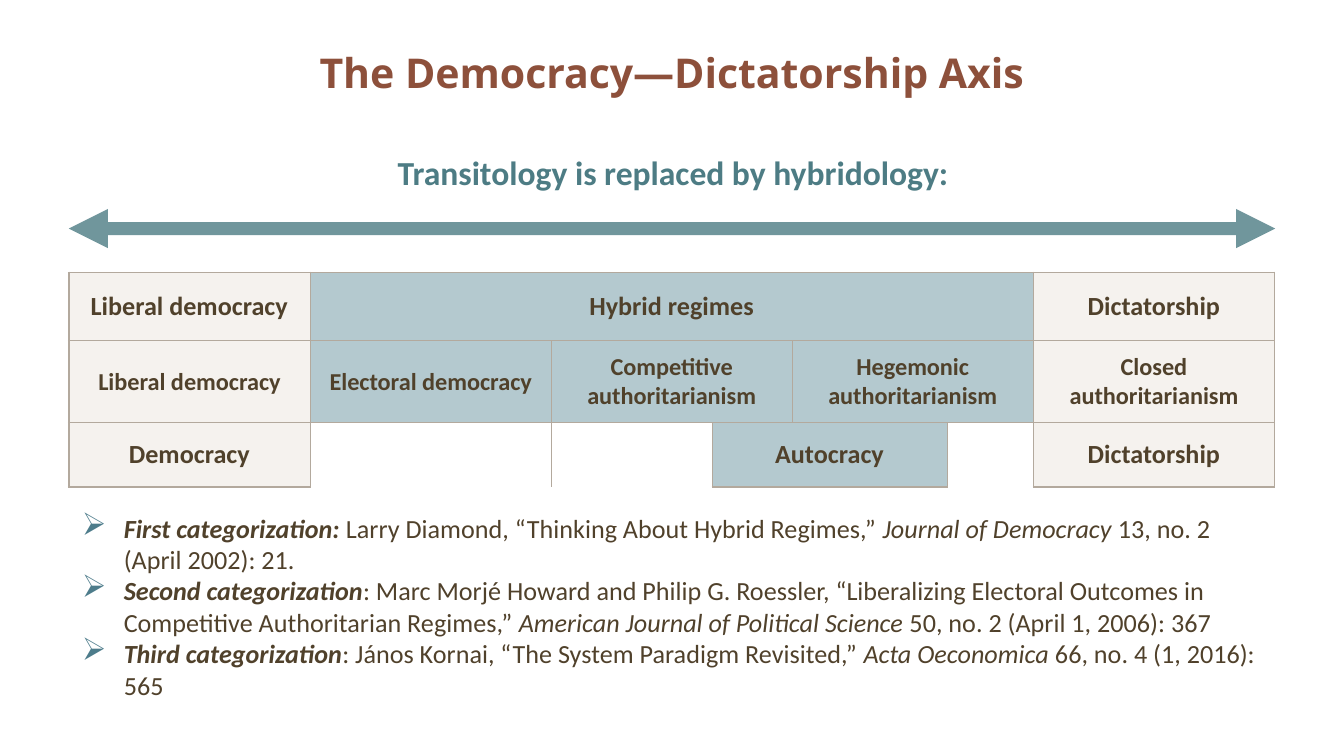
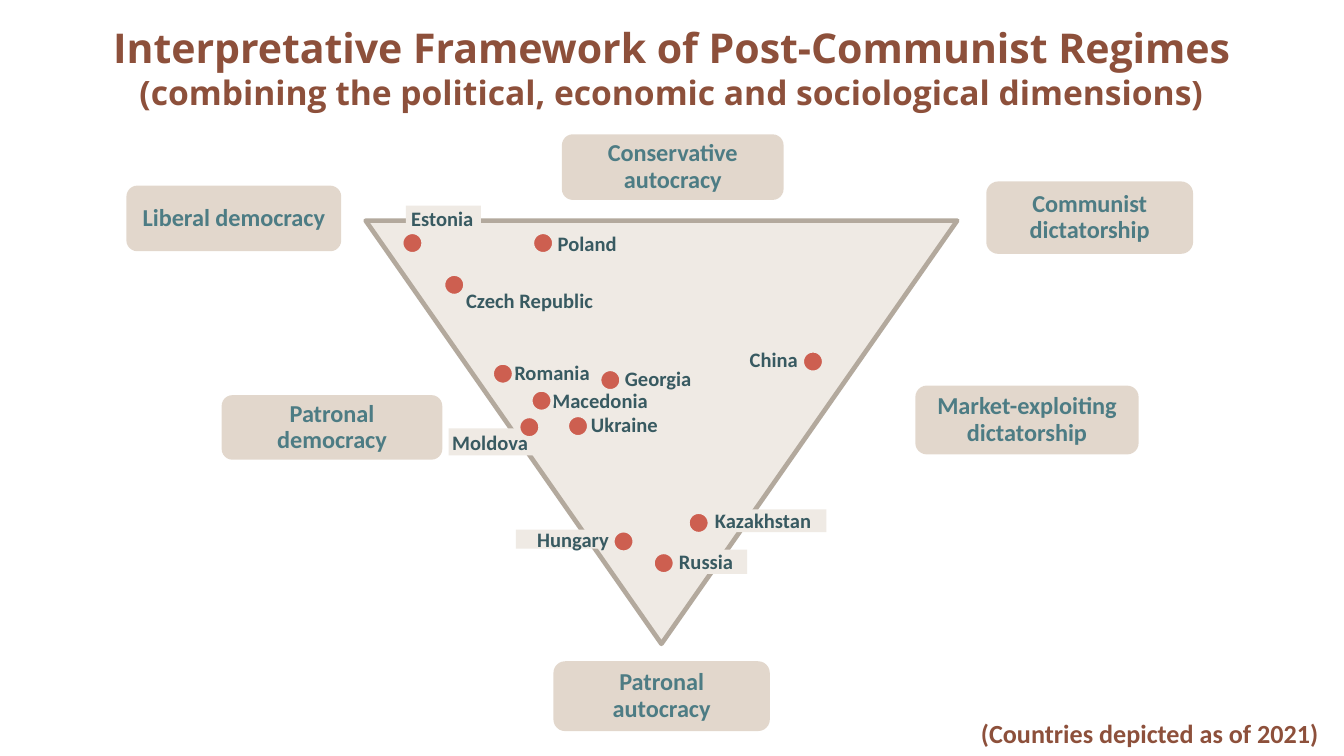
from lxml import etree
from pptx import Presentation
from pptx.dml.color import RGBColor
from pptx.enum.shapes import MSO_CONNECTOR, MSO_SHAPE
from pptx.enum.text import MSO_ANCHOR, PP_ALIGN
from pptx.oxml.ns import qn
from pptx.util import Cm, Pt

LEFT, CENTER, RIGHT = PP_ALIGN.LEFT, PP_ALIGN.CENTER, PP_ALIGN.RIGHT
TOP, MIDDLE = MSO_ANCHOR.TOP, MSO_ANCHOR.MIDDLE
RECTANGLE, ROUNDED = MSO_SHAPE.RECTANGLE, MSO_SHAPE.ROUNDED_RECTANGLE
TRIANGLE, OVAL = MSO_SHAPE.ISOSCELES_TRIANGLE, MSO_SHAPE.OVAL
STRAIGHT = MSO_CONNECTOR.STRAIGHT

BROWN, RUST, TEAL, TEAL_BULLET = "50412B", "8D503B", "4D7C84", "4D7C8B"
COUNTRY_TEXT, DOT_RED = "385A61", "CD5F50"
CREAM, SAND, BLUE_GREY, BORDER = "EFEAE4", "C7B09A", "6B95A1", "B3A99D"
NO_TABLE_STYLE = "{2D5ABB26-0587-4C30-8999-92F81FD0307C}"
DEFAULT_PAD = (0.25, 0.13, 0.25, 0.13)
DOT_SIZE = 0.41


def rgb(color):
    return RGBColor.from_string(color)


def cm(values):
    return [Cm(value) for value in values]


def add_element(parent, tag, **attributes):
    element = etree.SubElement(parent, qn(tag))
    for name, value in attributes.items():
        element.set(name, str(value))
    return element


def set_opacity(element, percent):
    """Make every plain colour inside the element partly transparent."""
    for color in element.iter(qn("a:srgbClr")):
        add_element(color, "a:alpha", val=percent * 1000)


class Page:
    """Holds the deck's style and the slide being filled."""

    body_font = "Calibri"
    title_font = "Open Sans"

    def __init__(self, deck):
        self.deck = deck
        self.shapes = None

    def start(self):
        self.shapes = self.deck.slides.add_slide(self.deck.slide_layouts[6]).shapes

    def set_font(self, font, size, color, bold=None, name=None):
        font.name = name or self.body_font
        font.size = Pt(size)
        font.bold = bold
        font.color.rgb = rgb(color)

    def set_text(self, shape, text, size, color, align=CENTER, anchor=MIDDLE,
                 pad=DEFAULT_PAD, spacing=None):
        """Put one bold paragraph into a shape or text box."""
        frame = self.set_frame(shape, anchor, pad)
        para = frame.paragraphs[0]
        para.text = text
        para.alignment = align
        if spacing:
            para.line_spacing = spacing
        self.set_font(para.font, size, color, True)

    def set_frame(self, shape, anchor, pad=DEFAULT_PAD):
        frame = shape.text_frame
        frame.word_wrap = True
        frame.vertical_anchor = anchor
        (frame.margin_left, frame.margin_top,
         frame.margin_right, frame.margin_bottom) = cm(pad)
        return frame

    def text_box(self, place):
        return self.shapes.add_textbox(*cm(place))

    def shape(self, kind, place, fill, line=None, width=1, opacity=None):
        shape = self.shapes.add_shape(kind, *cm(place))
        shape.shadow.inherit = False
        shape.fill.solid()
        shape.fill.fore_color.rgb = rgb(fill)
        if opacity:
            set_opacity(shape._element.spPr, opacity)
        if line:
            shape.line.color.rgb = rgb(line)
            shape.line.width = Pt(width)
        else:
            shape.line.fill.background()
        return shape

    def title(self, height, heading, subheading=None):
        frame = self.set_frame(self.text_box((0.3, 0, 24.79, height)), MIDDLE)
        para = frame.paragraphs[0]
        para.alignment = CENTER
        para.add_run().text = heading
        if subheading:
            para.add_line_break()
            span = para.add_run()
            span.text = subheading
            span.font.size = Pt(18)
        self.set_font(para.font, 22, RUST, True, self.title_font)

    def double_arrow(self, left, right, y):
        arrow = self.shapes.add_connector(STRAIGHT, *cm((left, y, right, y)))
        arrow.line.color.rgb = rgb(TEAL)
        arrow.line.width = Pt(7)
        properties = arrow._element.spPr
        set_opacity(properties, 80)
        line = properties.find(qn("a:ln"))
        add_element(line, "a:headEnd", type="triangle")
        add_element(line, "a:tailEnd", type="triangle")
        add_element(properties, "a:effectLst")

    def bullets(self, place, items):
        """Each item is a list of (text, bold, italic) spans."""
        frame = self.set_frame(self.text_box(place), TOP)
        for index, spans in enumerate(items):
            para = frame.add_paragraph() if index else frame.paragraphs[0]
            properties = para._p.get_or_add_pPr()
            properties.set("marL", str(Cm(0.79)))
            properties.set("indent", str(-Cm(0.79)))
            add_element(add_element(properties, "a:buClr"), "a:srgbClr", val=TEAL_BULLET)
            add_element(properties, "a:buSzPct", val=120000)
            add_element(properties, "a:buChar", char="➢")
            for text, bold, italic in spans:
                span = para.add_run()
                span.text = text
                span.font.bold = bold
                span.font.italic = italic
            self.set_font(para.font, 14, BROWN)

    def table(self, left, top, widths, heights, rows):
        """Each row lists (column, span, text, fill, opacity, edges) cells."""
        place = cm((left, top, sum(widths), sum(heights)))
        table = self.shapes.add_table(len(heights), len(widths), *place).table
        table._tbl.tblPr.find(qn("a:tableStyleId")).text = NO_TABLE_STYLE
        table.first_row = table.horz_banding = False
        for column, width in zip(table.columns, widths):
            column.width = Cm(width)
        for row, height in zip(table.rows, heights):
            row.height = Cm(height)
        for row, (size, cells) in enumerate(rows):
            for first, span, text, fill, opacity, edges in cells:
                last = first + span - 1
                cell = table.cell(row, first)
                if span > 1:
                    cell.merge(table.cell(row, last))
                if text:
                    cell.text = text
                    para = cell.text_frame.paragraphs[0]
                    para.alignment = CENTER
                    self.set_font(para.font, size, BROWN, True)
                cell.vertical_anchor = MIDDLE
                for column in range(first, last + 1):
                    part = table.cell(row, column)
                    self.fill_cell(part, fill, opacity)
                    outer = {"L": column == 0, "R": column == len(widths) - 1,
                             "T": row == 0, "B": row == len(heights) - 1}
                    hidden = ("L" if column > first else "") + ("R" if column < last else "")
                    shown = [edge for edge in "LRTB" if edge in edges and edge not in hidden]
                    self.border_cell(part, {edge: 1 if outer[edge] else 0.5 for edge in shown})

    def fill_cell(self, cell, fill, opacity):
        if fill:
            cell.fill.solid()
            cell.fill.fore_color.rgb = rgb(fill)
            set_opacity(cell._tc.tcPr, opacity)
        else:
            cell.fill.background()

    def border_cell(self, cell, widths):
        properties = cell._tc.get_or_add_tcPr()
        for index, (edge, width) in enumerate(widths.items()):
            line = add_element(properties, "a:ln" + edge, w=Pt(width))
            add_element(add_element(line, "a:solidFill"), "a:srgbClr", val=BORDER)
            properties.insert(index, line)

    def regime(self, text, place):
        shape = self.shape(ROUNDED, place, SAND, opacity=50)
        self.set_text(shape, text, 13, TEAL, pad=(0.22, 0.13, 0.22, 0.13), spacing=0.9)

    def country(self, name, place, align, pad, filled):
        label = self.shape(RECTANGLE, place, CREAM) if filled else self.text_box(place)
        sides = {LEFT: (pad, 0, 0, 0), CENTER: (pad, 0, pad, 0), RIGHT: (0, 0, pad, 0)}
        self.set_text(label, name, 11, COUNTRY_TEXT, align, pad=sides[align])

    def dot(self, left, top):
        self.shape(OVAL, (left, top, DOT_SIZE, DOT_SIZE), DOT_RED, CREAM, 2)


def pole(column, text):
    return column, 1, text, CREAM, 60, "LRTB"


def hybrid(column, span, text):
    return column, span, text, BLUE_GREY, 50, "LRTB"


def gap(column, edges):
    return column, 1, "", None, None, edges


REGIME_ROWS = [
    (14, [pole(0, "Liberal democracy"), hybrid(1, 5, "Hybrid regimes"),
          pole(6, "Dictatorship")]),
    (13, [pole(0, "Liberal democracy"), hybrid(1, 1, "Electoral democracy"),
          hybrid(2, 2, "Competitive authoritarianism"),
          hybrid(4, 2, "Hegemonic authoritarianism"),
          pole(6, "Closed authoritarianism")]),
    (14, [pole(0, "Democracy"), gap(1, "LT"), gap(2, "TR"), hybrid(3, 2, "Autocracy"),
          gap(5, "LTR"), pole(6, "Dictatorship")]),
]

SOURCES = [
    [("First categorization: ", True, True),
     ("Larry Diamond, “Thinking About Hybrid Regimes,” ", False, False),
     ("Journal of Democracy", False, True),
     (" 13, no. 2 (April 2002): 21.", False, False)],
    [("Second categorization", True, True),
     (": Marc Morjé Howard and Philip G. Roessler, “Liberalizing Electoral Outcomes in "
      "Competitive Authoritarian Regimes,” ", False, False),
     ("American Journal of Political Science", False, True),
     (" 50, no. 2 (April 1, 2006): 367", False, False)],
    [("Third categorization", True, True),
     (": János Kornai, “The System Paradigm Revisited,” ", False, False),
     ("Acta Oeconomica", False, True),
     (" 66, no. 4 (1, 2016): 565", False, False)],
]

REGIMES = [
    ("Communist dictatorship", (18.64, 3.43, 3.91, 1.37)),
    ("Liberal democracy", (2.39, 3.51, 4.06, 1.24)),
    ("Patronal autocracy", (10.46, 12.5, 4.09, 1.32)),
    ("Conservative autocracy", (10.62, 2.54, 4.19, 1.24)),
    ("Market-exploiting dictatorship", (17.3, 7.29, 4.22, 1.3)),
    ("Patronal democracy", (4.19, 7.47, 4.17, 1.22)),
]

# Name, dot corner, label place, alignment, side padding, filled label
COUNTRIES = [
    ("China", (15.16, 6.63), (13.89, 6.58, 1.47, 0.41), CENTER, 0.1, False),
    ("Poland", (10.06, 4.39), (10.29, 4.39, 1.8, 0.43), LEFT, 0.25, False),
    ("Estonia", (7.59, 4.39), (7.67, 3.89, 1.42, 0.46), LEFT, 0.1, True),
    ("Romania", (9.3, 6.86), (9.47, 6.88, 1.98, 0.3), LEFT, 0.25, False),
    ("Macedonia", (10.03, 7.37), (10.19, 7.24, 2.36, 0.64), LEFT, 0.25, False),
    ("Georgia", (11.33, 6.98), (11.56, 6.98, 1.85, 0.36), LEFT, 0.25, False),
    ("Ukraine", (10.72, 7.85), (10.92, 7.72, 1.88, 0.61), LEFT, 0.25, False),
    ("Hungary", (11.58, 10.03), (9.75, 10.01, 2.01, 0.36), RIGHT, 0.25, True),
    ("Russia", (12.34, 10.44), (12.57, 10.39, 1.55, 0.46), CENTER, 0.1, True),
    ("Kazakhstan", (13, 9.68), (13.26, 9.63, 2.36, 0.43), LEFT, 0.25, True),
    ("Czech Republic", (8.38, 5.18), (8.56, 5.38, 3, 0.61), LEFT, 0.25, False),
    ("Moldova", (9.8, 7.87), (8.48, 8.1, 1.6, 0.51), RIGHT, 0.1, True),
]


def build_axis(page):
    page.start()
    page.title(2.74, "The Democracy—Dictatorship Axis")
    page.bullets((1.3, 9.55, 22.81, 3.84), SOURCES)
    page.double_arrow(1.3, 24.1, 4.32)
    page.set_text(page.text_box((0.33, 2.74, 24.79, 1.02)),
                  "Transitology is replaced by hybridology:", 18, TEAL, anchor=TOP)
    page.table(1.3, 5.15, (4.56, 4.56, 3.04, 1.51, 2.93, 1.63, 4.56),
               (1.29, 1.55, 1.21), REGIME_ROWS)


def build_framework(page):
    page.start()
    triangle = page.shape(TRIANGLE, (6.91, 4.17, 11.18, 8), CREAM, BORDER, 2.5)
    triangle.rotation = 180
    for text, place in REGIMES:
        page.regime(text, place)
    page.title(2.54, "Interpretative Framework of Post-Communist Regimes",
               "(combining the political, economic and sociological dimensions)")
    page.set_text(page.text_box((18.29, 13.43, 7.11, 0.86)),
                  "(Countries depicted as of 2021)", 14, RUST, LEFT, TOP)
    for name, _, *label in COUNTRIES:
        page.country(name, *label)
    for _, corner, *_ in COUNTRIES:
        page.dot(*corner)


def main():
    deck = Presentation()
    deck.slide_width, deck.slide_height = Cm(25.4), Cm(14.29)
    page = Page(deck)
    build_axis(page)
    build_framework(page)
    deck.save("out.pptx")


if __name__ == "__main__":
    main()
